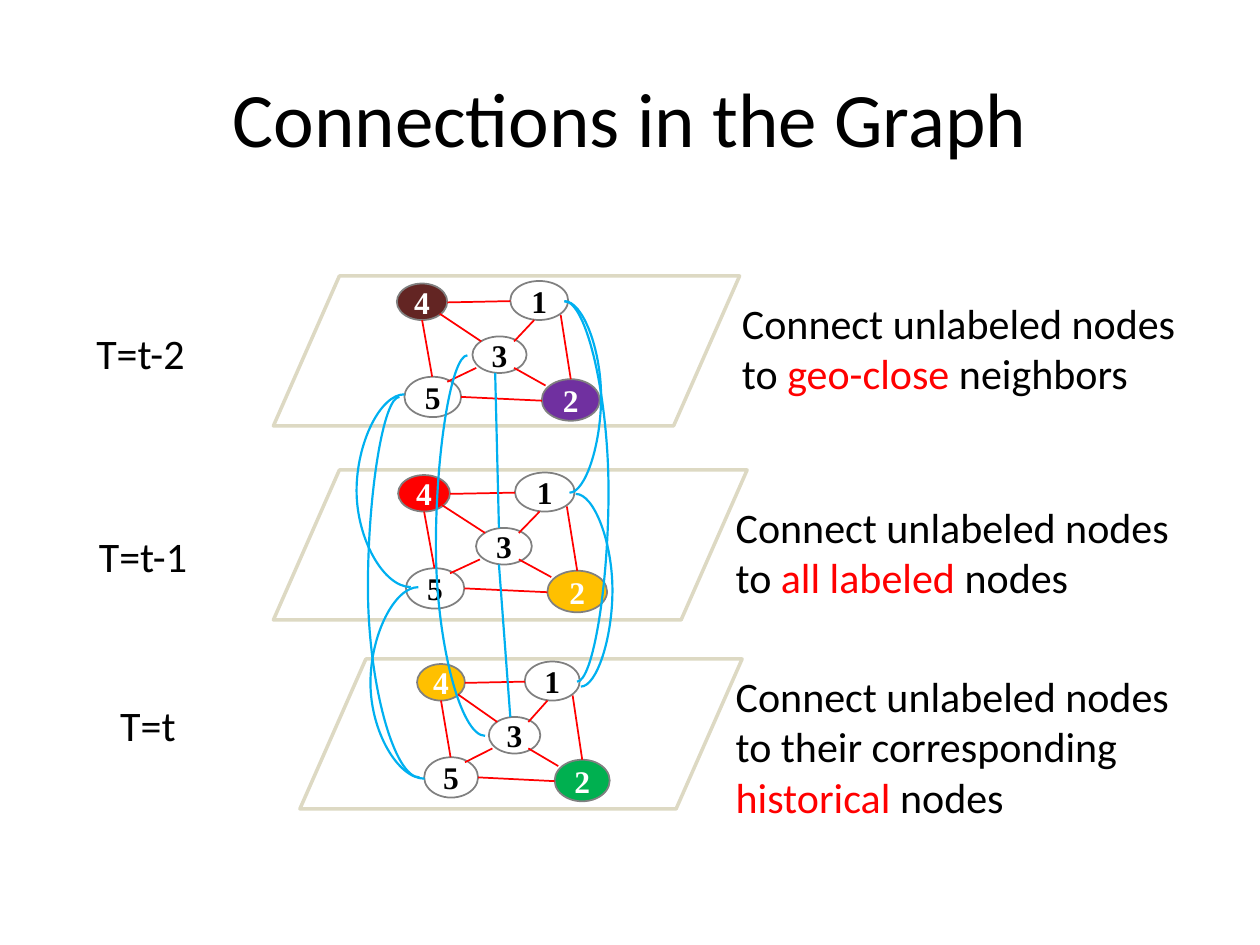
from lxml.etree import SubElement
from pptx import Presentation
from pptx.dml.color import RGBColor
from pptx.enum.shapes import MSO_CONNECTOR, MSO_SHAPE
from pptx.enum.text import MSO_ANCHOR, PP_ALIGN
from pptx.oxml.ns import qn
from pptx.util import Inches, Pt

BLACK = RGBColor(0x00, 0x00, 0x00)
WHITE = RGBColor(0xFF, 0xFF, 0xFF)
RED = RGBColor(0xFF, 0x00, 0x00)
BLUE = RGBColor(0x00, 0xB0, 0xF0)
GRAY = RGBColor(0x80, 0x80, 0x80)
TAN = RGBColor(0xDD, 0xD9, 0xC3)
BROWN = RGBColor(0x63, 0x25, 0x23)
PURPLE = RGBColor(0x70, 0x30, 0xA0)
AMBER = RGBColor(0xFF, 0xC0, 0x00)
GREEN = RGBColor(0x00, 0xB0, 0x50)

prs = Presentation()
prs.slide_width, prs.slide_height = Inches(10), Inches(7.5)
s = prs.slides.add_slide(prs.slide_layouts[6])


def add_text(x, y, w, h, runs, size=24, align=PP_ALIGN.LEFT, anchor=MSO_ANCHOR.TOP):
    tf = s.shapes.add_textbox(Inches(x), Inches(y), Inches(w), Inches(h)).text_frame
    tf.word_wrap = True
    tf.vertical_anchor = anchor
    p = tf.paragraphs[0]
    p.alignment = align
    p.font.size, p.font.name = Pt(size), "Calibri"
    for text, color in runs:
        r = p.add_run()
        r.text = text
        r.font.color.rgb = color


def add_link(x1, y1, x2, y2, color, width, bulge=None):
    """Straight line, or a curve that bends out to x = bulge."""
    kind = MSO_CONNECTOR.STRAIGHT if bulge is None else MSO_CONNECTOR.CURVE
    c = s.shapes.add_connector(kind, Inches(x1), Inches(y1), Inches(x2), Inches(y2))
    c.line.color.rgb = color
    c.line.width = Pt(width)
    props = c._element.spPr
    SubElement(props, qn("a:effectLst"))
    if bulge is not None:
        adj = round((bulge - x1) / (x2 - x1) * 100000)
        guides = props.find(qn("a:prstGeom")).find(qn("a:avLst"))
        SubElement(guides, qn("a:gd"), name="adj1", fmla=f"val {adj}")


# Title and time labels
add_text(0.5, 0.3, 9, 1.25, [("Connections in the Graph", BLACK)], 44,
         PP_ALIGN.CENTER, MSO_ANCHOR.MIDDLE)
for x, y, label in [(0.55, 2.55, "T=t-2"), (0.57, 4.16, "T=t-1"), (0.61, 5.5, "T=t")]:
    add_text(x, y, 1.13, 0.5, [(label, BLACK)], align=PP_ALIGN.CENTER)

# Nodes and edges of one layer, measured from the corner of node 4
NODES = [("1", 0.9, -0.02, 0.46, 0.31), ("3", 0.6, 0.42, 0.43, 0.29),
         ("4", 0, 0, 0.4, 0.29), ("5", 0.06, 0.74, 0.45, 0.32),
         ("2", 1.15, 0.76, 0.46, 0.33)]
EDGES = [(0.93, 0.46, 1.09, 0.29), (0.63, 0.67, 0.4, 0.78),
         (0.93, 0.67, 1.18, 0.81), (0.9, 0.14, 0.4, 0.15),
         (0.67, 0.46, 0.34, 0.24), (1.3, 0.25, 1.38, 0.76),
         (0.51, 0.9, 1.15, 0.93), (0.28, 0.74, 0.2, 0.29)]

# Layers: plane left, top, width; node 4 left, top; x scale; labeled colours
LAYERS = [(2.17, 2.19, 3.7, 3.15, 2.25, 1, {"4": BROWN, "2": PURPLE}),
          (2.17, 3.73, 3.76, 3.16, 3.77, 1.03, {"4": RED, "2": AMBER}),
          (2.38, 5.23, 3.51, 3.31, 5.27, 0.95, {"4": AMBER, "2": GREEN})]

for left, top, width, x0, y0, scale, labeled in LAYERS:
    plane = s.shapes.add_shape(MSO_SHAPE.PARALLELOGRAM, Inches(left), Inches(top),
                               Inches(width), Inches(1.19))
    plane.adjustments[0] = 0.44
    plane.shadow.inherit = False
    plane.fill.solid()
    plane.fill.fore_color.rgb = WHITE
    plane.line.color.rgb = TAN
    plane.line.width = Pt(2)

    for name, dx, dy, w, h in NODES:
        sp = s.shapes.add_shape(MSO_SHAPE.OVAL, Inches(x0 + dx * scale), Inches(y0 + dy),
                                Inches(w * scale), Inches(h))
        sp.shadow.inherit = False
        sp.fill.solid()
        sp.fill.fore_color.rgb = labeled.get(name, WHITE)
        sp.line.color.rgb = GRAY
        sp.line.width = Pt(1)
        tf = sp.text_frame
        tf.word_wrap = False
        tf.margin_left = tf.margin_right = tf.margin_top = tf.margin_bottom = 0
        tf.vertical_anchor = MSO_ANCHOR.MIDDLE
        p = tf.paragraphs[0]
        p.text = name
        p.alignment = PP_ALIGN.CENTER
        p.font.size, p.font.name, p.font.bold = Pt(18), "Times New Roman", True
        p.font.color.rgb = WHITE if name in labeled else BLACK

    for x1, y1, x2, y2 in EDGES:
        add_link(x0 + x1 * scale, y0 + y1, x0 + x2 * scale, y0 + y2, RED, 1)

# Links between the same node at different times
HISTORY = [(4.48, 2.39, 4.52, 3.91, 4.77), (4.57, 3.92, 4.61, 5.45, 4.86),
           (3.21, 3.13, 3.26, 4.66, 2.83), (3.32, 4.66, 3.37, 6.18, 2.94),
           (3.93, 2.96, 3.96, 4.19, None), (3.17, 3.15, 3.33, 6.17, 2.92),
           (4.48, 2.39, 4.58, 5.41, 4.83), (3.96, 4.48, 4.05, 5.69, None),
           (3.71, 2.82, 3.85, 5.84, 3.46)]
for x1, y1, x2, y2, bulge in HISTORY:
    add_link(x1, y1, x2, y2, BLUE, 1.25, bulge)

# Explanations
NOTES = [(5.79, 2.31, 3.81, 0.91, "to ", "geo-close", " neighbors"),
         (5.74, 3.93, 3.86, 0.91, "to ", "all labeled ", "nodes"),
         (5.74, 5.27, 3.79, 1.31, "to their corresponding ", "historical", " nodes")]
for x, y, w, h, lead, key, rest in NOTES:
    add_text(x, y, w, h, [("Connect unlabeled nodes " + lead, BLACK),
                          (key, RED), (rest, BLACK)])

prs.save("out.pptx")
